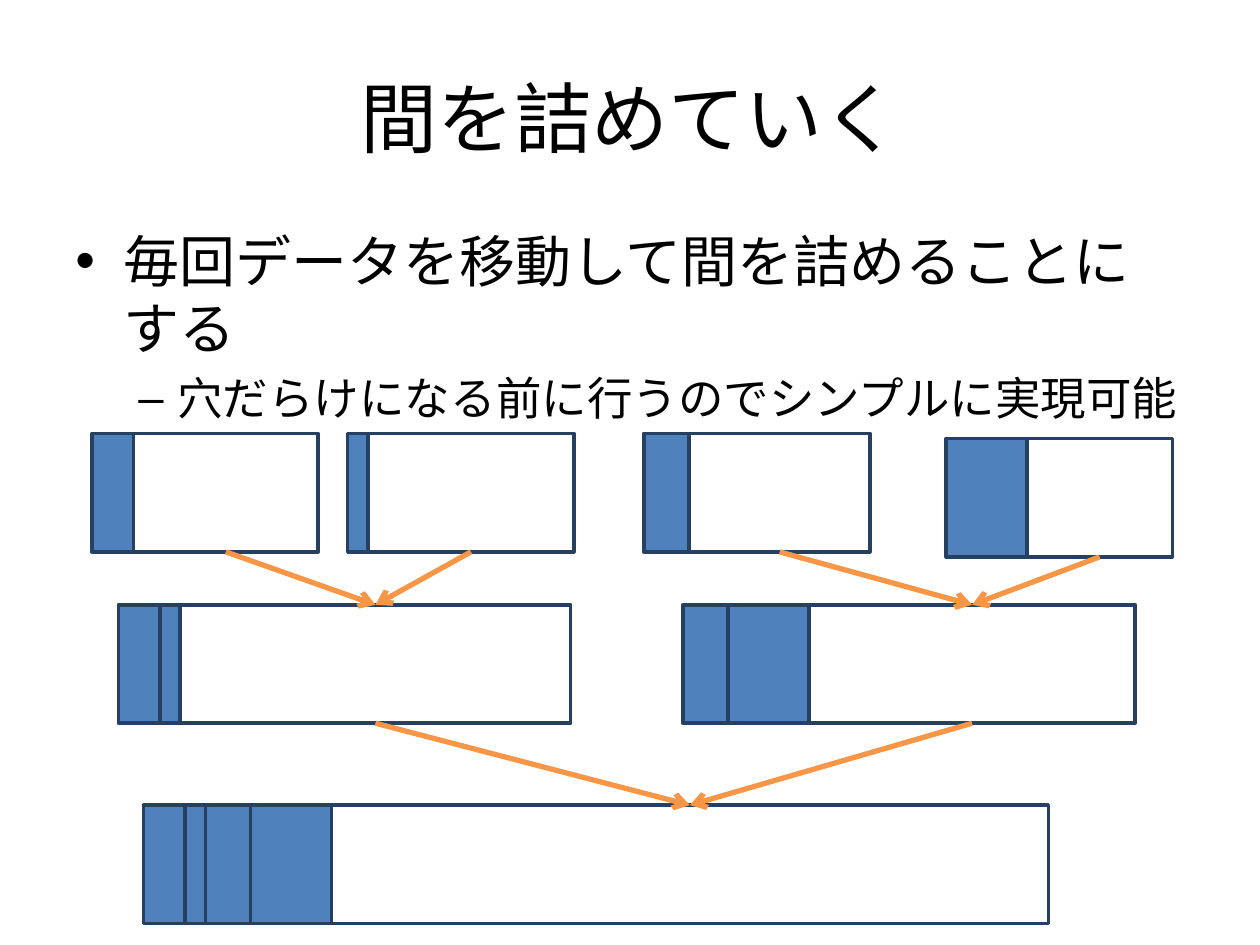
from collections import namedtuple

from lxml.etree import SubElement
from pptx import Presentation
from pptx.dml.color import RGBColor
from pptx.enum.shapes import MSO_CONNECTOR, MSO_SHAPE
from pptx.enum.text import MSO_ANCHOR, PP_ALIGN
from pptx.oxml.ns import qn
from pptx.util import Inches, Pt

COLORS = {
    "text": "000000",
    "data": "4F81BD",
    "free": "FFFFFF",
    "outline": "254061",
    "arrow": "F79646",
}
FONT = "Calibri"

# The slide is a grid of 100 columns by 75 rows of square cells.
COLUMNS, ROWS = 100, 75
CELL = Inches(10) / COLUMNS

BLOCK_HEIGHT = 9.4
CAPACITY = 71.8 / 4
DATA_WIDTHS = {"A": 3.3, "B": 1.6, "C": 3.6, "D": 6.4}

# Contents, left column and top row of each buffer, level by level.
LEVELS = [
    [("A", 7.3, 34.4), ("B", 27.6, 34.4), ("C", 51.1, 34.4), ("D", 75.1, 34.8)],
    [("AB", 9.4, 48), ("CD", 54.2, 48)],
    [("ABCD", 11.4, 63.9)],
]

FreeSpace = namedtuple("FreeSpace", "center top bottom")


def grid(cells):
    return round(cells * CELL)


def color(name):
    return RGBColor.from_string(COLORS[name])


def add_text_box(slide, left, top, width, height, anchor):
    box = slide.shapes.add_textbox(*map(grid, (left, top, width, height)))
    frame = box.text_frame
    frame.word_wrap = True
    frame.vertical_anchor = anchor
    return frame


def write_paragraph(paragraph, text, size):
    paragraph.text = text
    paragraph.font.name = FONT
    paragraph.font.size = Pt(size)
    paragraph.font.color.rgb = color("text")


def set_bullet(paragraph, character, margin, hanging):
    properties = paragraph._p.get_or_add_pPr()
    properties.set("marL", str(grid(margin)))
    properties.set("indent", str(-grid(hanging)))
    SubElement(properties, qn("a:buFont"), typeface="Arial")
    SubElement(properties, qn("a:buChar"), char=character)


def add_title(slide, text):
    frame = add_text_box(slide, 5, 3, 90, 12.5, MSO_ANCHOR.MIDDLE)
    paragraph = frame.paragraphs[0]
    write_paragraph(paragraph, text, 44)
    paragraph.alignment = PP_ALIGN.CENTER


def add_body(slide, items):
    frame = add_text_box(slide, 5, 17.5, 90, 16.5, MSO_ANCHOR.TOP)
    for index, (text, level, size, character, margin, hanging) in enumerate(items):
        paragraph = frame.add_paragraph() if index else frame.paragraphs[0]
        write_paragraph(paragraph, text, size)
        paragraph.level = level
        paragraph.space_before = Pt(size * 0.2)
        set_bullet(paragraph, character, margin, hanging)


def add_block(slide, left, top, width, fill):
    block = slide.shapes.add_shape(
        MSO_SHAPE.RECTANGLE, *map(grid, (left, top, width, BLOCK_HEIGHT))
    )
    block.shadow.inherit = False
    block.fill.solid()
    block.fill.fore_color.rgb = color(fill)
    block.line.color.rgb = color("outline")
    block.line.width = Pt(2)


def add_buffer(slide, contents, left, top):
    """Draw the data packed to the left and return the free space after it."""
    end = left + CAPACITY * len(contents)
    for name in contents:
        add_block(slide, left, top, DATA_WIDTHS[name], "data")
        left += DATA_WIDTHS[name]
    add_block(slide, left, top, end - left, "free")
    return FreeSpace((left + end) / 2, top, top + BLOCK_HEIGHT)


def add_arrow(slide, source, target):
    arrow = slide.shapes.add_connector(
        MSO_CONNECTOR.STRAIGHT,
        *map(grid, (source.center, source.bottom, target.center, target.top)),
    )
    arrow.line.color.rgb = color("arrow")
    arrow.line.width = Pt(3)
    SubElement(arrow.line._get_or_add_ln(), qn("a:tailEnd"), type="arrow")
    SubElement(arrow._element.spPr, qn("a:effectLst"))


def add_merge_tree(slide):
    levels = [[add_buffer(slide, *buffer) for buffer in level] for level in LEVELS]
    for sources, targets in zip(levels, levels[1:]):
        for index, source in enumerate(sources):
            add_arrow(slide, source, targets[index // 2])


def main():
    presentation = Presentation()
    presentation.slide_width = grid(COLUMNS)
    presentation.slide_height = grid(ROWS)
    slide = presentation.slides.add_slide(presentation.slide_layouts[6])
    add_title(slide, "間を詰めていく")
    # 26 pt keeps the second item on one line, clear of the buffers.
    add_body(slide, [
        ("毎回データを移動して間を詰めることにする", 0, 32, "•", 3.8, 3.8),
        ("穴だらけになる前に行うのでシンプルに実現可能", 1, 26, "–", 8.1, 3.1),
    ])
    add_merge_tree(slide)
    presentation.save("out.pptx")


if __name__ == "__main__":
    main()
